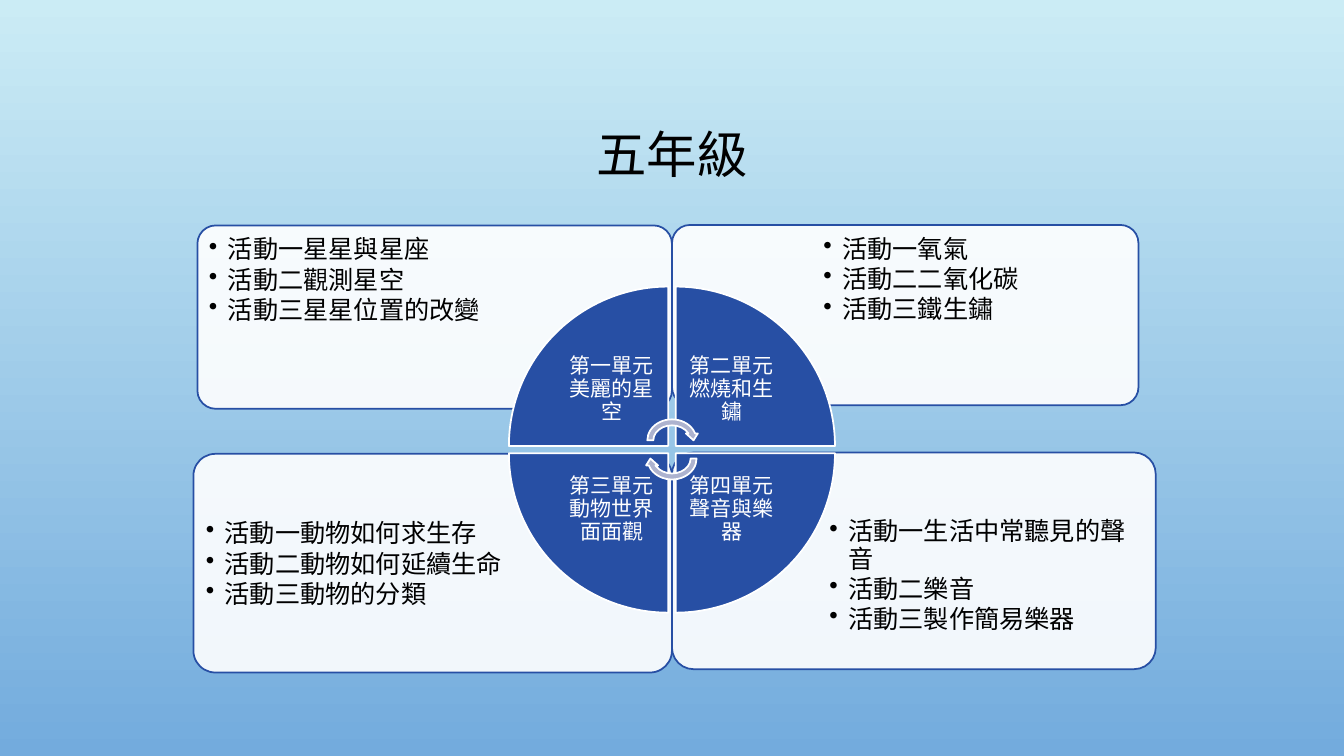
import pptx
import pptx.util
import pptx.dml.color
import pptx.enum.shapes
import pptx.enum.text
from lxml import etree

Pt = pptx.util.Pt
RGB = pptx.dml.color.RGBColor.from_string
KIND = pptx.enum.shapes.MSO_SHAPE
ALIGN = pptx.enum.text.PP_ALIGN
ANCHOR = pptx.enum.text.MSO_ANCHOR
NS = "http://schemas.openxmlformats.org/drawingml/2006/main"
HUES = {"sky": "CBECF5", "sea": "73ABDD", "blue": "274FA4",
        "white": "FFFFFF", "black": "000000", "gray": "ADB3CF"}


def write(frame, lines, size, hue="black", align=ALIGN.CENTER,
          anchor=ANCHOR.MIDDLE, inset=5.4, after=0, bullet=False):
    frame.word_wrap = True
    frame.auto_size = pptx.enum.text.MSO_AUTO_SIZE.NONE
    frame.vertical_anchor = anchor
    frame.margin_left = frame.margin_right = Pt(inset)
    frame.margin_top = frame.margin_bottom = Pt(inset)
    for n, line in enumerate(lines):
        para = frame.add_paragraph() if n else frame.paragraphs[0]
        if bullet:
            props = para._p.get_or_add_pPr()
            props.set("marL", str(Pt(13.5)))
            props.set("indent", str(-Pt(13.5)))
            etree.SubElement(props, f"{{{NS}}}buChar", char="•")
        para.alignment = align
        para.line_spacing = 0.9
        para.space_after = Pt(after)
        run = para.add_run()
        run.text = line
        run.font.name = "Calibri"
        run.font.size = Pt(size)
        run.font.color.rgb = RGB(HUES[hue])


def draw(kind, box, fill, edge, turn=0):
    shape = slide.shapes.add_shape(kind, *map(Pt, box))
    shape.shadow.inherit = False
    shape.fill.solid()
    shape.fill.fore_color.rgb = RGB(HUES[fill])
    shape.line.color.rgb = RGB(HUES[edge])
    shape.line.width = Pt(1.25)
    shape.rotation = turn
    return shape


deck = pptx.Presentation()
deck.slide_width, deck.slide_height = Pt(960), Pt(540)
slide = deck.slides.add_slide(deck.slide_layouts[5])

back = slide.background.fill
back.gradient()
back.gradient_angle = 270
for stop, hue in zip(back.gradient_stops, ("sky", "sea")):
    stop.color.rgb = RGB(HUES[hue])

title = slide.shapes.title
title.left, title.top, title.width, title.height = map(Pt, (72, 49, 816, 126))
write(title.text_frame, ["五年級"], size=36)

panels = [
    (480, 323.2, 345.6, 154.8, 1, 1,
     ["活動一生活中常聽見的聲音", "活動二樂音", "活動三製作簡易樂器"]),
    (138.2, 324.2, 341.8, 156.2, 0, 1,
     ["活動一動物如何求生存", "活動二動物如何延續生命", "活動三動物的分類"]),
    (480, 160.7, 333.2, 128.8, 1, 0,
     ["活動一氧氣", "活動二二氧化碳", "活動三鐵生鏽"]),
    (141, 161, 339, 131, 0, 0,
     ["活動一星星與星座", "活動二觀測星空", "活動三星星位置的改變"]),
]
for x, y, wide, high, col, row, lines in panels:
    panel = draw(KIND.ROUNDED_RECTANGLE, (x, y, wide, high), "white", "blue")
    panel.adjustments[0] = 0.1
    color = panel.fill._xPr.find(f".//{{{NS}}}srgbClr")
    etree.SubElement(color, f"{{{NS}}}alpha", val="90000")
    pad = 0.022 * high
    area = (x + 0.3 * wide * col + pad, y + 0.25 * high * row + pad,
            0.7 * wide - 2 * pad, 0.75 * high - 2 * pad)
    label = slide.shapes.add_textbox(*map(Pt, area))
    write(label.text_frame, lines, size=18, align=ALIGN.LEFT,
          anchor=ANCHOR.TOP, after=2.2, bullet=True)

side = 113.8
inner = side / 2 ** 0.5
units = [(0, 0, "第一單元美麗的星空"), (1, 0, "第二單元燃燒和生鏽"),
         (1, 1, "第四單元聲音與樂器"), (0, 1, "第三單元動物世界面面觀")]
for n, (col, row, name) in enumerate(units):
    x, y = 363.5 + 119.1 * col, 204.7 + 119.1 * row
    draw(KIND.PIE_WEDGE, (x, y, side, side), "blue", "white", 90 * n)
    spot = (x + (side - inner) * (1 - col), y + (side - inner) * (1 - row))
    label = slide.shapes.add_textbox(*map(Pt, (*spot, inner, inner)))
    write(label.text_frame, [name], size=15, hue="white", inset=8.4)

for top, turn in ((297.4, 0), (310.4, 180)):
    draw(KIND.CIRCULAR_ARROW, (460.3, top, 39.4, 34.2), "gray", "white", turn)

deck.save("out.pptx")
